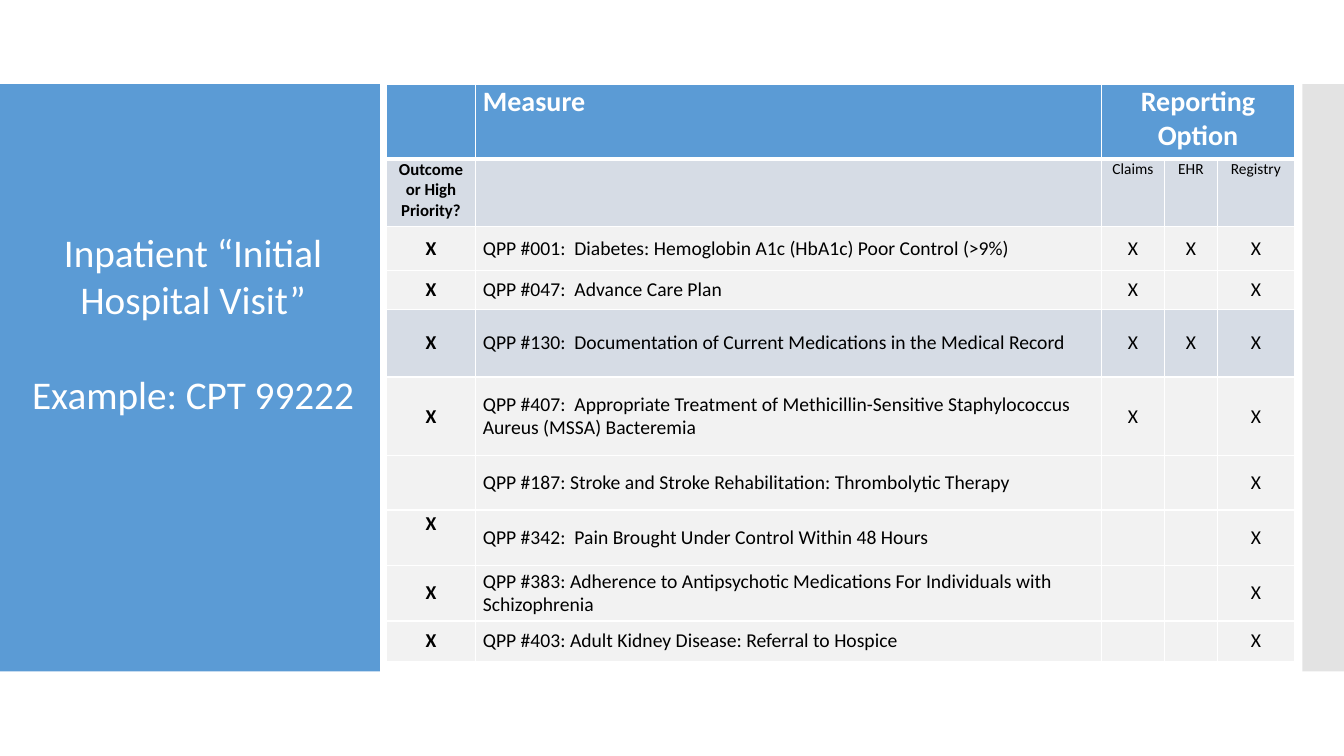
from lxml import etree
from pptx import Presentation
from pptx.dml.color import RGBColor
from pptx.enum.shapes import MSO_SHAPE
from pptx.enum.text import MSO_ANCHOR, PP_ALIGN
from pptx.oxml.ns import qn
from pptx.util import Pt

RECTANGLE = MSO_SHAPE.RECTANGLE
TOP, MIDDLE, BOTTOM = MSO_ANCHOR.TOP, MSO_ANCHOR.MIDDLE, MSO_ANCHOR.BOTTOM
LEFT, CENTER = PP_ALIGN.LEFT, PP_ALIGN.CENTER

FONT = "Calibri"
BLUE, BLUE_GRAY, PALE_GRAY, SIDE_GRAY = "5B9BD5", "D6DCE5", "F2F2F2", "C8C8C8"
WHITE, BLACK = "FFFFFF", "000000"

COLUMN_WIDTHS = [64.1, 447.1, 44.6, 38.2, 54.7]
ROW_HEIGHTS = [53.3, 48.2, 31, 28.1, 48.2, 56.2, 38.9, 39.6, 39.6, 28.8]
HEADINGS = ["", "Measure", "Reporting Option", "", ""]
SUBHEADINGS = ["Outcome or High Priority?", "", "Claims", "EHR", "Registry"]
MEASURES = [
    ["X", "QPP #001:  Diabetes: Hemoglobin A1c (HbA1c) Poor Control (>9%)", "X", "X", "X"],
    ["X", "QPP #047:  Advance Care Plan", "X", "", "X"],
    ["X", "QPP #130:  Documentation of Current Medications in the Medical Record", "X", "X", "X"],
    ["X", "QPP #407:  Appropriate Treatment of Methicillin-Sensitive Staphylococcus "
          "Aureus (MSSA) Bacteremia", "X", "", "X"],
    ["", "QPP #187: Stroke and Stroke Rehabilitation: Thrombolytic Therapy", "", "", "X"],
    ["X", "QPP #342:  Pain Brought Under Control Within 48 Hours", "", "", "X"],
    ["X", "QPP #383: Adherence to Antipsychotic Medications For Individuals with "
          "Schizophrenia", "", "", "X"],
    ["X", "QPP #403: Adult Kidney Disease: Referral to Hospice", "", "", "X"],
]
HIGHLIGHTED_ROW = 4
RAISED_MARK = (7, 0)


def color(hex_code):
    return RGBColor.from_string(hex_code)


def style_paragraph(paragraph, size, hex_code, bold=False, align=CENTER):
    paragraph.alignment = align
    for run in paragraph.runs:
        run.font.name = FONT
        run.font.size = Pt(size)
        run.font.bold = bold
        run.font.color.rgb = color(hex_code)


def add_band(slide, left, top, width, height, hex_code, opacity=100):
    band = slide.shapes.add_shape(RECTANGLE, Pt(left), Pt(top), Pt(width), Pt(height))
    band.shadow.inherit = False
    band.fill.solid()
    band.fill.fore_color.rgb = color(hex_code)
    band.line.fill.background()
    if opacity < 100:
        fill_color = band.fill._xPr.find(qn("a:solidFill"))[0]
        etree.SubElement(fill_color, qn("a:alpha"), val=str(opacity * 1000))


def add_title(slide, left, top, width, height):
    title = slide.shapes.add_textbox(Pt(left), Pt(top), Pt(width), Pt(height))
    frame = title.text_frame
    frame.word_wrap = True
    frame.vertical_anchor = BOTTOM
    frame.text = "Inpatient “Initial Hospital Visit”\nExample: CPT 99222"
    for paragraph in frame.paragraphs:
        style_paragraph(paragraph, 28, WHITE)
    frame.paragraphs[1].space_before = Pt(34)


def set_borders(cell, bottom_width):
    properties = cell._tc.get_or_add_tcPr()
    for side, width in (("L", 1), ("R", 1), ("T", 1), ("B", bottom_width)):
        line = etree.SubElement(properties, qn("a:ln" + side), w=str(Pt(width)))
        fill = etree.SubElement(line, qn("a:solidFill"))
        etree.SubElement(fill, qn("a:srgbClr"), val=WHITE)


def row_fill(row):
    if row == 0:
        return BLUE
    return BLUE_GRAY if row in (1, HIGHLIGHTED_ROW) else PALE_GRAY


def text_style(row, column):
    if row == 0:
        return 20, WHITE, True
    if row == 1:
        return (12, BLACK, True) if column == 0 else (11, BLACK, False)
    return 14, BLACK, column == 0


def fill_cell(cell, text, row, column):
    set_borders(cell, 3 if row == 0 else 1)
    cell.fill.solid()
    cell.fill.fore_color.rgb = color(row_fill(row))
    cell.margin_left = cell.margin_right = Pt(5)
    cell.margin_top = cell.margin_bottom = 0
    cell.vertical_anchor = TOP if row < 2 else MIDDLE
    if (row, column) == RAISED_MARK:
        cell.vertical_anchor = TOP
        cell.margin_top = Pt(1.5)
    cell.text_frame.text = text
    align = LEFT if column == 1 else CENTER
    style_paragraph(cell.text_frame.paragraphs[0], *text_style(row, column), align)


def add_measures_table(slide, left, top):
    rows = [HEADINGS, SUBHEADINGS] + MEASURES
    table = slide.shapes.add_table(
        len(rows), len(COLUMN_WIDTHS), Pt(left), Pt(top),
        Pt(sum(COLUMN_WIDTHS)), Pt(sum(ROW_HEIGHTS))).table
    table.horz_banding = False
    for column, width in zip(table.columns, COLUMN_WIDTHS):
        column.width = Pt(width)
    for row, height in zip(table.rows, ROW_HEIGHTS):
        row.height = Pt(height)
    for r, texts in enumerate(rows):
        for c, text in enumerate(texts):
            fill_cell(table.cell(r, c), text, r, c)
    table.cell(0, 2).merge(table.cell(0, 4))


def main():
    deck = Presentation()
    deck.slide_width, deck.slide_height = Pt(960), Pt(540)
    slide = deck.slides.add_slide(deck.slide_layouts[6])
    add_band(slide, 0, 60, 271.3, 419.5, BLUE)
    add_band(slide, 930.3, 60, 29.7, 419.5, SIDE_GRAY, opacity=50)
    add_title(slide, 0, 232.6, 275.8, 69.1)
    add_measures_table(slide, 275.8, 60.5)
    deck.save("out.pptx")


if __name__ == "__main__":
    main()
